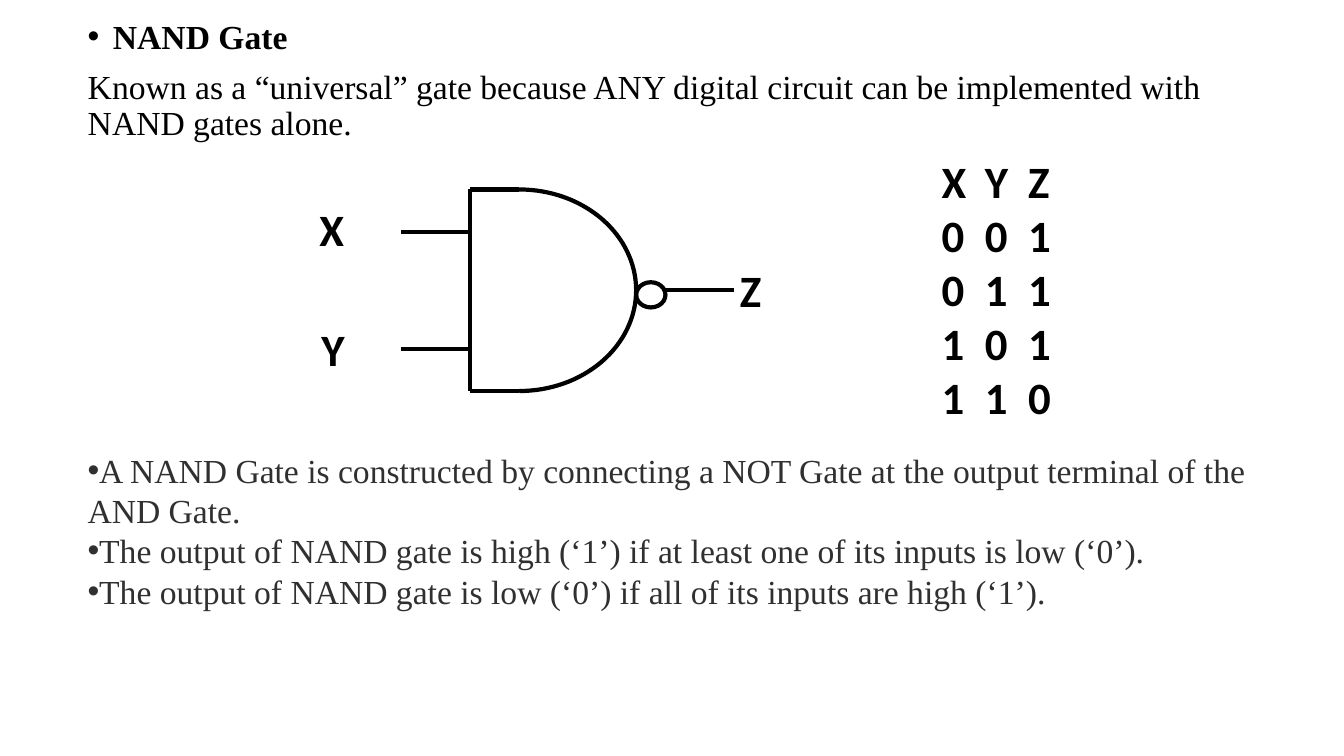
import math

import pptx
import pptx.dml.color
import pptx.enum.shapes
import pptx.enum.text
import pptx.oxml.ns
import pptx.util
from lxml import etree

Inches = pptx.util.Inches
Pt = pptx.util.Pt
qn = pptx.oxml.ns.qn

COLORS = {"ink": "000000", "notes": "303030"}
SERIF, SANS = "Times New Roman", "Calibri"


class GateSlide:
    """Holds the slide, its gate drawing and the shared style."""

    def __init__(self, presentation):
        self.slide = presentation.slides.add_slide(presentation.slide_layouts[1])
        title = self.slide.shapes.title
        title.element.getparent().remove(title.element)
        self.gate = None

    def start_gate(self):
        self.gate = self.slide.shapes.add_group_shape().shapes

    def color(self, name):
        return pptx.dml.color.RGBColor.from_string(COLORS[name])

    def add_run(self, paragraph, text, size, font, color="ink", bold=False):
        run = paragraph.add_run()
        run.text = text
        run.font.size = Pt(size)
        run.font.name = font
        run.font.bold = bold
        run.font.color.rgb = self.color(color)

    def set_bullet(self, paragraph, bullet, margin=0.0):
        properties = paragraph._p.get_or_add_pPr()
        properties.set("marL", str(Inches(margin)))
        properties.set("indent", str(Inches(-margin)))
        if bullet:
            font = etree.SubElement(properties, qn("a:buFont"))
            font.set("typeface", "Arial")
            etree.SubElement(properties, qn("a:buChar")).set("char", "•")
        else:
            etree.SubElement(properties, qn("a:buNone"))

    def set_tabs(self, paragraph, positions):
        tabs = etree.SubElement(paragraph._p.get_or_add_pPr(), qn("a:tabLst"))
        for position in positions:
            tab = etree.SubElement(tabs, qn("a:tab"))
            tab.set("pos", str(Inches(position)))
            tab.set("algn", "l")

    def add_body(self, box, items):
        body = self.slide.placeholders[1]
        body.left, body.top, body.width, body.height = map(Inches, box)
        frame = body.text_frame
        frame.auto_size = pptx.enum.text.MSO_AUTO_SIZE.NONE
        for index, (text, heading) in enumerate(items):
            paragraph = frame.add_paragraph() if index else frame.paragraphs[0]
            paragraph.line_spacing = 0.9
            paragraph.space_before = Pt(10)
            self.set_bullet(paragraph, heading, 0.25 if heading else 0)
            self.add_run(paragraph, text, 24, SERIF, bold=heading)

    def add_text(self, box, lines, size=32, font=SANS, color="ink", bold=True,
                 wrap=True, bullet=False, tabs=()):
        shape = self.slide.shapes.add_textbox(*map(Inches, box))
        frame = shape.text_frame
        frame.word_wrap = wrap
        frame.auto_size = pptx.enum.text.MSO_AUTO_SIZE.SHAPE_TO_FIT_TEXT
        for index, text in enumerate(lines):
            paragraph = frame.add_paragraph() if index else frame.paragraphs[0]
            if bullet:
                self.set_bullet(paragraph, True)
            if tabs:
                self.set_tabs(paragraph, tabs)
            self.add_run(paragraph, text, size, font, color, bold)

    def style_outline(self, shape):
        shape.shadow.inherit = False
        shape.fill.background()
        self.style_line(shape.line)

    def style_line(self, line):
        line.color.rgb = self.color("ink")
        line.width = Pt(3)

    def add_line(self, start, end):
        connector = self.gate.add_connector(
            pptx.enum.shapes.MSO_CONNECTOR.STRAIGHT, *map(Inches, start + end))
        self.style_line(connector.line)
        etree.SubElement(connector.element.spPr, qn("a:effectLst"))

    def add_quarter_arc(self, center, radii, direction, steps=32):
        points = []
        for step in range(steps + 1):
            angle = math.pi / 2 * step / steps
            points.append((Inches(center[0] + radii[0] * math.sin(angle)),
                           Inches(center[1] + direction * radii[1] * math.cos(angle))))
        builder = self.gate.build_freeform(*points[0])
        builder.add_line_segments(points[1:], close=False)
        self.style_outline(builder.convert_to_shape())

    def add_bubble(self, box):
        self.style_outline(self.gate.add_shape(
            pptx.enum.shapes.MSO_SHAPE.OVAL, *map(Inches, box)))


def main():
    presentation = pptx.Presentation()
    presentation.slide_width = Inches(13.33)
    presentation.slide_height = Inches(7.5)
    page = GateSlide(presentation)

    page.add_body((0.77, 0.15, 11.5, 6.83), [
        ("NAND Gate", True),
        ("Known as a “universal” gate because ANY digital circuit can be "
         "implemented with NAND gates alone.", False),
    ])

    back, center, middle, half_height = 4.66, 5.15, 2.88, 1
    wire = 0.68
    page.start_gate()
    for direction in (-1, 1):
        page.add_quarter_arc((center, middle), (1.16, half_height), direction)
    for direction in (-1, 1):
        edge = middle + direction * half_height
        page.add_line((center, edge), (back, edge))
    page.add_line((back, middle - half_height), (back, middle + half_height))
    for direction in (-1, 1):
        level = middle + direction * 0.58
        page.add_line((back, level), (back - wire, level))
    page.add_line((6.6 + wire, middle), (6.6, middle))
    page.add_bubble((6.31, 2.8, 0.29, 0.25))

    page.add_text((7.24, 2.56, 0.67, 0.64), ["Z"])
    page.add_text((3.07, 1.95, 0.45, 0.64), ["X"], wrap=False)
    page.add_text((3.09, 3.14, 0.44, 0.64), ["Y"], wrap=False)

    rows = ["XYZ", "001", "011", "101", "110"]
    page.add_text((9.24, 1.48, 2.44, 2.79), ["\t".join(row) for row in rows],
                  tabs=(0.43, 0.86))

    page.add_text((0.77, 4.41, 11.96, 1.72), [
        "A NAND Gate is constructed by connecting a NOT Gate at the output "
        "terminal of the AND Gate.",
        "The output of NAND gate is high (‘1’) if at least one of its inputs is low (‘0’).",
        "The output of NAND gate is low (‘0’) if all of its inputs are high (‘1’).",
    ], size=24, font=SERIF, color="notes", bold=False, bullet=True)

    presentation.save("out.pptx")


if __name__ == "__main__":
    main()
